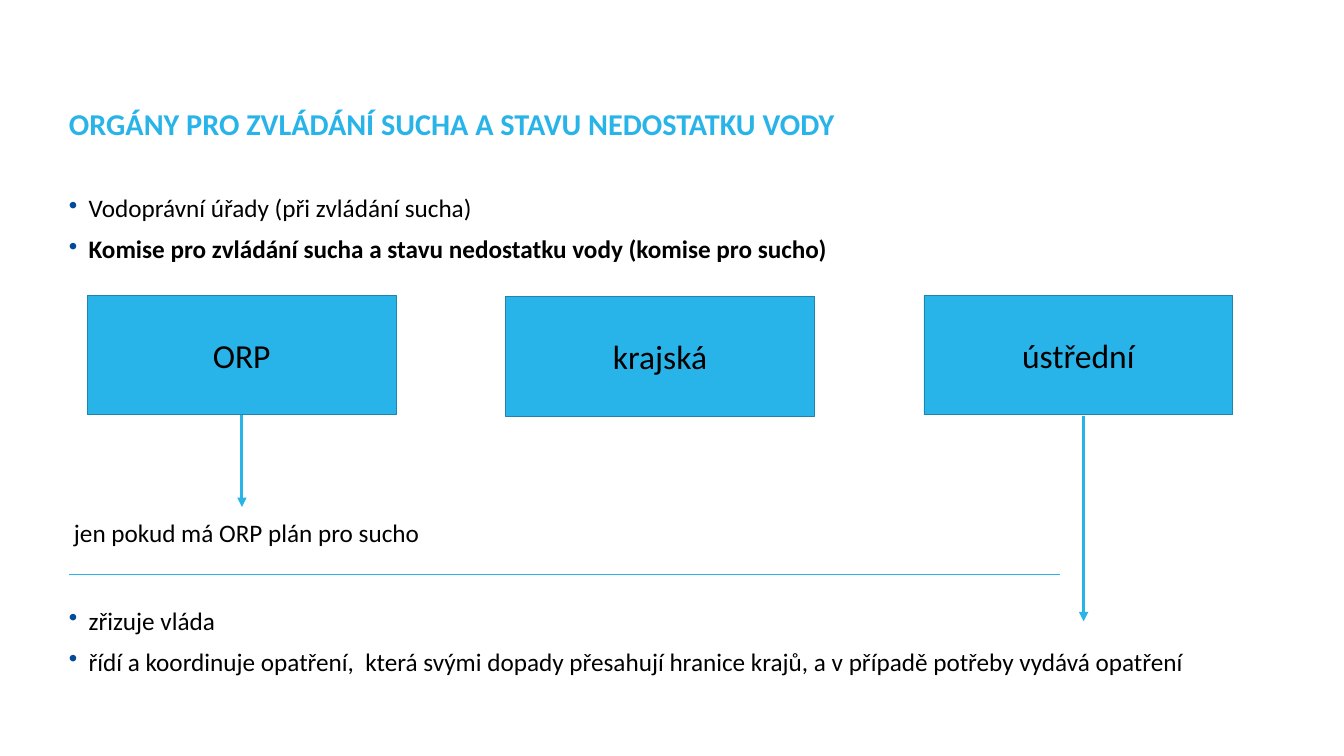
from pptx import Presentation
from pptx.dml.color import RGBColor
from pptx.enum.shapes import MSO_CONNECTOR, MSO_SHAPE
from pptx.enum.text import MSO_ANCHOR, PP_ALIGN
from pptx.oxml.ns import qn
from pptx.util import Pt
from lxml import etree

RECTANGLE = MSO_SHAPE.RECTANGLE
STRAIGHT = MSO_CONNECTOR.STRAIGHT
CENTER, JUSTIFY = PP_ALIGN.CENTER, PP_ALIGN.JUSTIFY
MIDDLE = MSO_ANCHOR.MIDDLE

BLUE = RGBColor(0x29, 0xB4, 0xE9)
BORDER = RGBColor(0x1E, 0x85, 0xAC)
NAVY = RGBColor(0x00, 0x4A, 0x99)
BLACK = RGBColor(0, 0, 0)
FONT = "Calibri"

# Content
TITLE = "ORGÁNY PRO ZVLÁDÁNÍ SUCHA A STAVU NEDOSTATKU VODY"
AUTHORITIES = [  # text, bold
    ("Vodoprávní úřady (při zvládání sucha)", False),
    ("Komise pro zvládání sucha a stavu nedostatku vody (komise pro sucho)", True),
]
CENTRAL_DUTIES = [
    ("zřizuje vláda", False),
    ("řídí a koordinuje opatření,  která svými dopady přesahují hranice krajů, "
     "a v případě potřeby vydává opatření", False),
]
COMMISSIONS = [("ORP", 422), ("krajská", 424), ("ústřední", 422)]  # label, top
ORP_NOTE = "jen pokud má ORP plán pro sucho"

# Layout
LEFT, CONTENT_WIDTH = 98.6, 1723.7
BOX_LEFT, BOX_STEP, BOX_WIDTH, BOX_HEIGHT = 124.6, 597.6, 441.4, 170.6
LINES = [  # x1, y1, x2, y2, width, arrow
    (345.6, 592.6, 345.6, 724.3, 4.5, True),
    (1548, 594.7, 1548, 887.8, 4.5, True),
    (LEFT, 820.8, 1514.2, 820.8, 0.5, False),
]

prs = Presentation()
prs.slide_width, prs.slide_height = Pt(1920), Pt(1080)
slide = prs.slides.add_slide(prs.slide_layouts[6])


def style(paragraph, size, color=BLACK, bold=False):
    font = paragraph.font
    font.name, font.size, font.bold = FONT, Pt(size), bold
    font.color.rgb = color


def add_frame(left, top, width, height, inset=0):
    frame = slide.shapes.add_textbox(Pt(left), Pt(top), Pt(width), Pt(height)).text_frame
    frame.word_wrap = True
    frame.margin_left = frame.margin_right = Pt(inset)
    frame.margin_top = frame.margin_bottom = Pt(inset / 2)
    return frame


def add_bullet(paragraph):
    properties = paragraph._p.get_or_add_pPr()
    properties.set("marL", str(Pt(28)))
    properties.set("indent", str(-Pt(28)))
    color = etree.SubElement(properties, qn("a:buClr"))
    etree.SubElement(color, qn("a:srgbClr"), val=str(NAVY))
    etree.SubElement(properties, qn("a:buChar"), char="•")


def add_bullet_list(top, items, alignment=None):
    frame = add_frame(LEFT, top, CONTENT_WIDTH, 100)
    for i, (text, bold) in enumerate(items):
        paragraph = frame.paragraphs[0] if i == 0 else frame.add_paragraph()
        paragraph.text = text
        paragraph.alignment = alignment
        paragraph.line_spacing = 0.9
        if i:
            paragraph.space_before = Pt(20)
        add_bullet(paragraph)
        style(paragraph, 36, bold=bold)


# Title
title = add_frame(LEFT, 156.2, CONTENT_WIDTH, 96.5).paragraphs[0]
title.text = TITLE
title.line_spacing = 0.9
style(title, 43.2, BLUE, True)

# Bullet lists
add_bullet_list(280, AUTHORITIES)
add_bullet_list(869, CENTRAL_DUTIES, JUSTIFY)

# Commission boxes
for i, (label, top) in enumerate(COMMISSIONS):
    box = slide.shapes.add_shape(RECTANGLE, Pt(BOX_LEFT + i * BOX_STEP), Pt(top),
                                 Pt(BOX_WIDTH), Pt(BOX_HEIGHT))
    box.shadow.inherit = False
    box.fill.solid()
    box.fill.fore_color.rgb = BLUE
    box.line.color.rgb = BORDER
    box.line.width = Pt(1)
    box.text_frame.vertical_anchor = MIDDLE
    paragraph = box.text_frame.paragraphs[0]
    paragraph.text = label
    paragraph.alignment = CENTER
    style(paragraph, 48)

# Note under the ORP arrow
note = add_frame(LEFT, 735.8, 549.4, 51.1, 7.2).paragraphs[0]
note.text = ORP_NOTE
style(note, 36)

# Arrows and divider
for x1, y1, x2, y2, width, arrow in LINES:
    connector = slide.shapes.add_connector(STRAIGHT, Pt(x1), Pt(y1), Pt(x2), Pt(y2))
    connector.line.color.rgb = BLUE
    connector.line.width = Pt(width)
    if arrow:
        etree.SubElement(connector.line._get_or_add_ln(), qn("a:tailEnd"), type="triangle")
    etree.SubElement(connector._element.spPr, qn("a:effectLst"))

prs.save("out.pptx")
